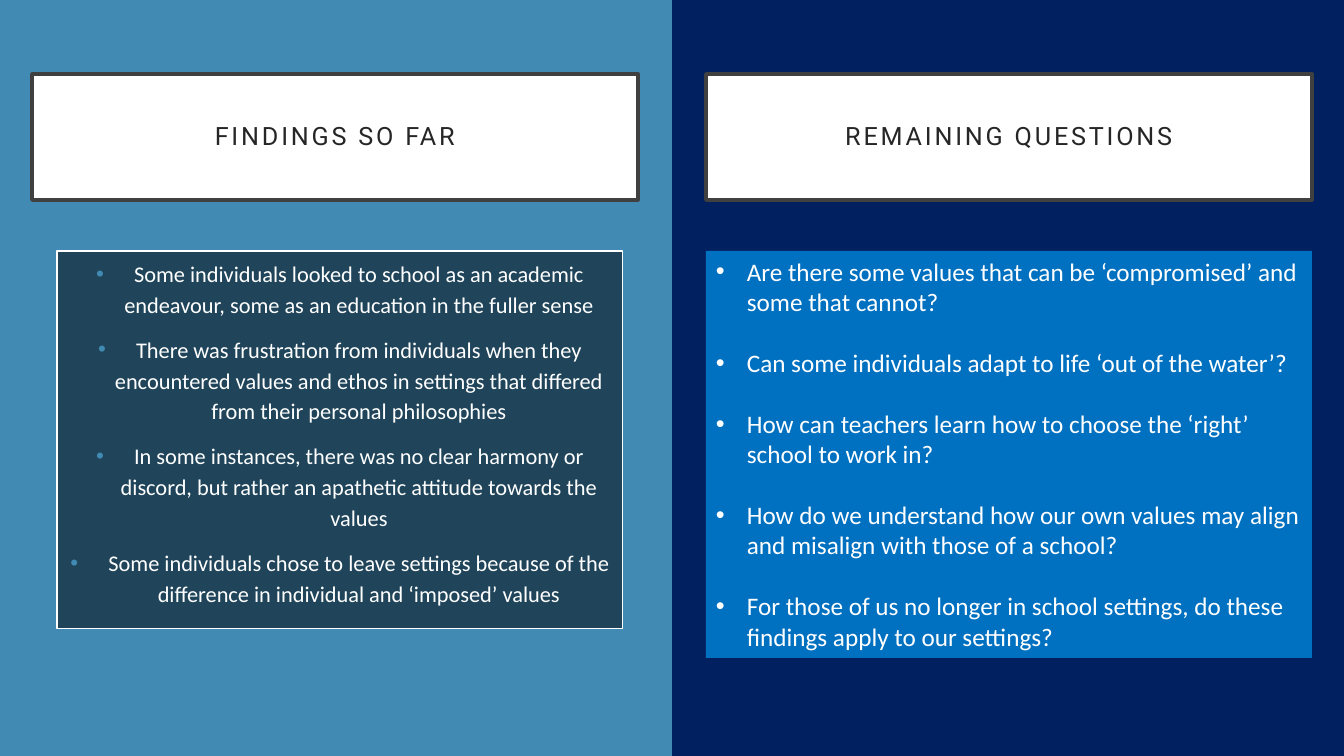
from lxml import etree
from pptx import Presentation
from pptx import util as u
from pptx.dml.color import RGBColor
from pptx.enum import shapes, text
from pptx.oxml.ns import qn

# Content
FINDINGS_TITLE = "FINDINGS SO FAR"
FINDINGS = [
    "Some individuals looked to school as an academic endeavour, some as an education in the fuller sense",
    "There was frustration from individuals when they encountered values and ethos in settings "
    "that differed from their personal philosophies",
    "In some instances, there was no clear harmony or discord, but rather an apathetic attitude "
    "towards the values",
    "Some individuals chose to leave settings because of the difference in individual and ‘imposed’ values",
]
QUESTIONS_TITLE = "REMAINING QUESTIONS"
QUESTIONS = [
    "Are there some values that can be ‘compromised’ and some that cannot?",
    "Can some individuals adapt to life ‘out of the water’?",
    "How can teachers learn how to choose the ‘right’ school to work in?",
    "How do we understand how our own values may align and misalign with those of a school?",
    "For those of us no longer in school settings, do these findings apply to our settings?",
]

NAVY = RGBColor(0x00, 0x20, 0x60)
STEEL = RGBColor(0x41, 0x8A, 0xB3)
TEAL = RGBColor(0x20, 0x45, 0x5A)
BLUE = RGBColor(0x00, 0x70, 0xC0)
WHITE = RGBColor(0xFF, 0xFF, 0xFF)
FRAME = RGBColor(0x40, 0x40, 0x40)
INK = RGBColor(0x26, 0x26, 0x26)

# Layout in px
W, H = 1344, 756
HEAD_Y, HEAD_W, HEAD_H = 74, 606, 126
LEFT_X, RIGHT_X = 32, 706
LIST_Y = 251
FINDINGS_BOX = (57, LIST_Y, 566, 378)
QUESTIONS_BOX = (RIGHT_X, LIST_Y, HEAD_W, 407)


def px(n):
    return u.Emu(round(n * 914400 / 100.8))


def place(sp, x, y, w, h):
    sp.left, sp.top, sp.width, sp.height = px(x), px(y), px(w), px(h)


def paint(sp, fill, line=None, width=0):
    sp.fill.solid()
    sp.fill.fore_color.rgb = fill
    if line is None:
        sp.line.fill.background()
    else:
        sp.line.color.rgb = line
        sp.line.width = u.Pt(width)


def add_run(p, words, font, size, color):
    r = p.add_run()
    r.text = words
    r.font.name, r.font.size = font, u.Pt(size)
    r.font.color.rgb = color
    return r


def heading(sp, x, words):
    place(sp, x, HEAD_Y, HEAD_W, HEAD_H)
    paint(sp, WHITE, FRAME, 2.5)
    tf = sp.text_frame
    tf.word_wrap = True
    tf.auto_size = text.MSO_AUTO_SIZE.NONE
    tf.vertical_anchor = text.MSO_ANCHOR.MIDDLE
    tf.margin_left = tf.margin_right = tf.margin_top = tf.margin_bottom = px(20)
    p = tf.paragraphs[0]
    p.alignment = text.PP_ALIGN.CENTER
    p.line_spacing = 0.9
    r = add_run(p, words, "Roboto", 18, INK)
    r.font._element.set("spc", "200")


def bullet(p, indent, color):
    pPr = p._p.get_or_add_pPr()
    pPr.set("marL", str(px(indent)))
    pPr.set("indent", str(-px(indent)))
    clr = etree.SubElement(pPr, qn("a:buClr"))
    etree.SubElement(clr, qn("a:srgbClr"), val=str(color))
    etree.SubElement(pPr, qn("a:buFont"), typeface="Arial")
    etree.SubElement(pPr, qn("a:buChar"), char="•")


def bullets(sp, items, size, align, spacing, first_gap, gap, indent, color):
    tf = sp.text_frame
    tf.word_wrap = True
    tf.auto_size = text.MSO_AUTO_SIZE.NONE
    for i, item in enumerate(items):
        p = tf.add_paragraph() if i else tf.paragraphs[0]
        p.alignment = align
        p.line_spacing = spacing
        p.space_before = u.Pt(gap if i else first_gap)
        bullet(p, indent, color)
        add_run(p, item, "Calibri", size, WHITE)


prs = Presentation()
prs.slide_width, prs.slide_height = px(W), px(H)
s = prs.slides.add_slide(prs.slide_layouts[1])
title, body = s.placeholders

# Background: navy slide with a steel left half
s.background.fill.solid()
s.background.fill.fore_color.rgb = NAVY
half = s.shapes.add_shape(shapes.MSO_SHAPE.RECTANGLE, 0, 0, px(W / 2), px(H))
half.shadow.inherit = False
paint(half, STEEL)
s.shapes._spTree.insert(2, half._element)  # send to back

# Headings
heading(title, RIGHT_X, QUESTIONS_TITLE)
findings_head = s.shapes.add_shape(shapes.MSO_SHAPE.RECTANGLE, 0, 0, 0, 0)
findings_head.shadow.inherit = False
heading(findings_head, LEFT_X, FINDINGS_TITLE)

# Lists
place(body, *FINDINGS_BOX)
paint(body, TEAL, WHITE, 0.75)
bullets(body, FINDINGS, 16, text.PP_ALIGN.CENTER, 1.15, 10, 10, 38, STEEL)

questions = s.shapes.add_textbox(*map(px, QUESTIONS_BOX))
paint(questions, BLUE)
bullets(questions, QUESTIONS, 18, text.PP_ALIGN.LEFT, 1.0, 0, 22, 31, WHITE)

prs.save("out.pptx")
